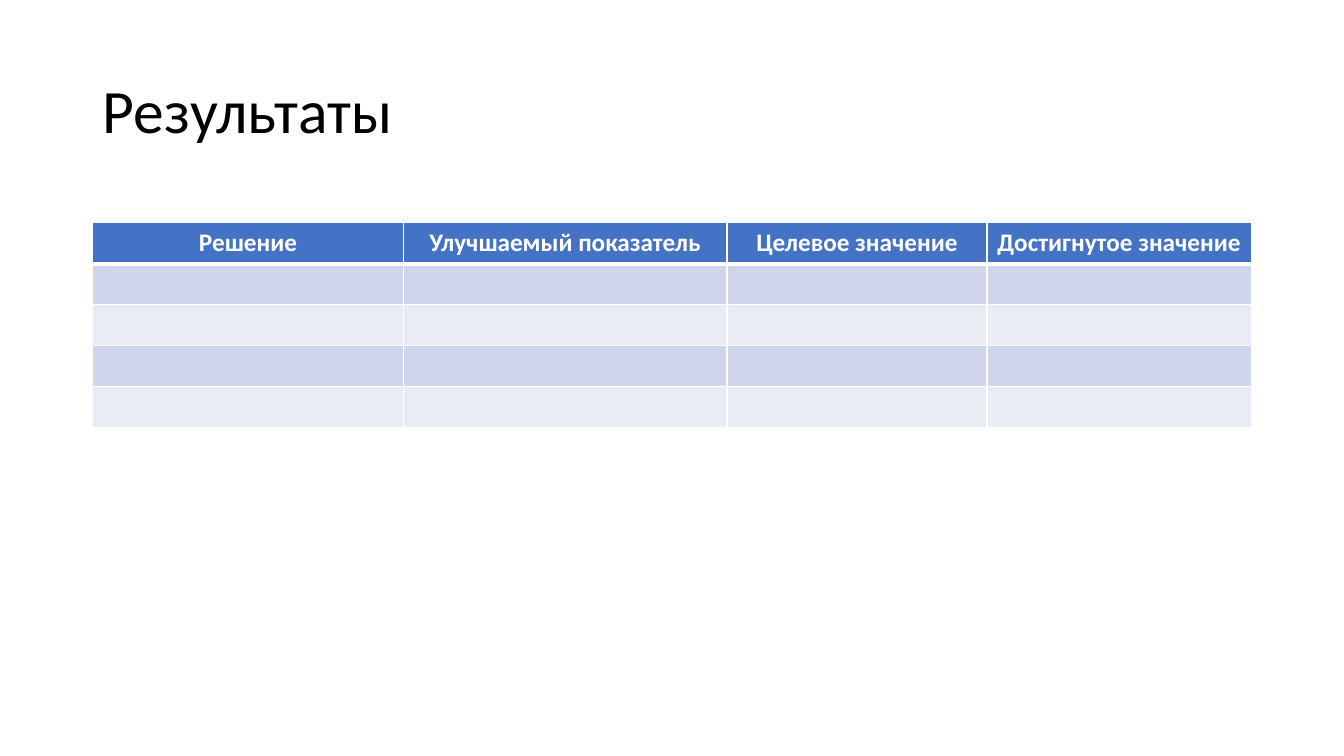
import pptx
import pptx.util
import pptx.dml.color
import pptx.enum.text
import pptx.oxml.ns
from lxml import etree
from pptx.util import Inches, Pt

HEADING = "Результаты"
COLUMNS = [
    ("Решение", 3.08),
    ("Улучшаемый показатель", 3.21),
    ("Целевое значение", 2.58),
    ("Достигнутое значение", 2.62),
]
EMPTY_ROWS = 4
ROW_HEIGHT = 0.406
LEFT, WIDTH = 0.92, 11.5
FONT = "Calibri"
BLACK, WHITE, HEADER_FILL = "000000", "FFFFFF", "4472C4"
BANDS = ["CFD5EA", "E9EBF5"]


def color(value):
    return pptx.dml.color.RGBColor.from_string(value)


def set_font(paragraph, size, value, bold=False):
    font = paragraph.font
    font.name, font.size, font.bold = FONT, Pt(size), bold
    font.color.rgb = color(value)


def set_borders(cell, top, bottom):
    qn = pptx.oxml.ns.qn
    properties = cell._tc.get_or_add_tcPr()
    for side, points in (("L", 1), ("R", 1), ("T", top), ("B", bottom)):
        line = etree.SubElement(properties, qn("a:ln" + side), w=str(Pt(points)))
        fill = etree.SubElement(line, qn("a:solidFill"))
        etree.SubElement(fill, qn("a:srgbClr"), val=WHITE)


def add_heading(slide):
    heading = slide.shapes.title
    heading.left, heading.top = Inches(LEFT), Inches(0.4)
    heading.width, heading.height = Inches(WIDTH), Inches(1.45)
    heading.text_frame.text = HEADING
    heading.text_frame.vertical_anchor = pptx.enum.text.MSO_ANCHOR.MIDDLE
    paragraph = heading.text_frame.paragraphs[0]
    paragraph.alignment = pptx.enum.text.PP_ALIGN.LEFT
    paragraph.line_spacing = 0.9
    set_font(paragraph, 44, BLACK)


def add_results(slide):
    rows = EMPTY_ROWS + 1
    results = slide.shapes.add_table(
        rows, len(COLUMNS), Inches(LEFT), Inches(2.21),
        Inches(WIDTH), Inches(ROW_HEIGHT * rows)).table
    for row in results.rows:
        row.height = Inches(ROW_HEIGHT)
    for c, (label, width) in enumerate(COLUMNS):
        results.columns[c].width = Inches(width)
        for r in range(rows):
            cell = results.cell(r, c)
            set_borders(cell, 3 if r == 1 else 1, 3 if r == 0 else 1)
            cell.fill.solid()
            cell.fill.fore_color.rgb = color(BANDS[(r - 1) % 2] if r else HEADER_FILL)
        header = results.cell(0, c)
        header.text = label
        paragraph = header.text_frame.paragraphs[0]
        paragraph.alignment = pptx.enum.text.PP_ALIGN.CENTER
        set_font(paragraph, 18, WHITE, bold=True)


def main():
    deck = pptx.Presentation()
    deck.slide_width, deck.slide_height = Inches(13.33), Inches(7.5)
    slide = deck.slides.add_slide(deck.slide_layouts[5])
    add_heading(slide)
    add_results(slide)
    deck.save("out.pptx")


if __name__ == "__main__":
    main()
